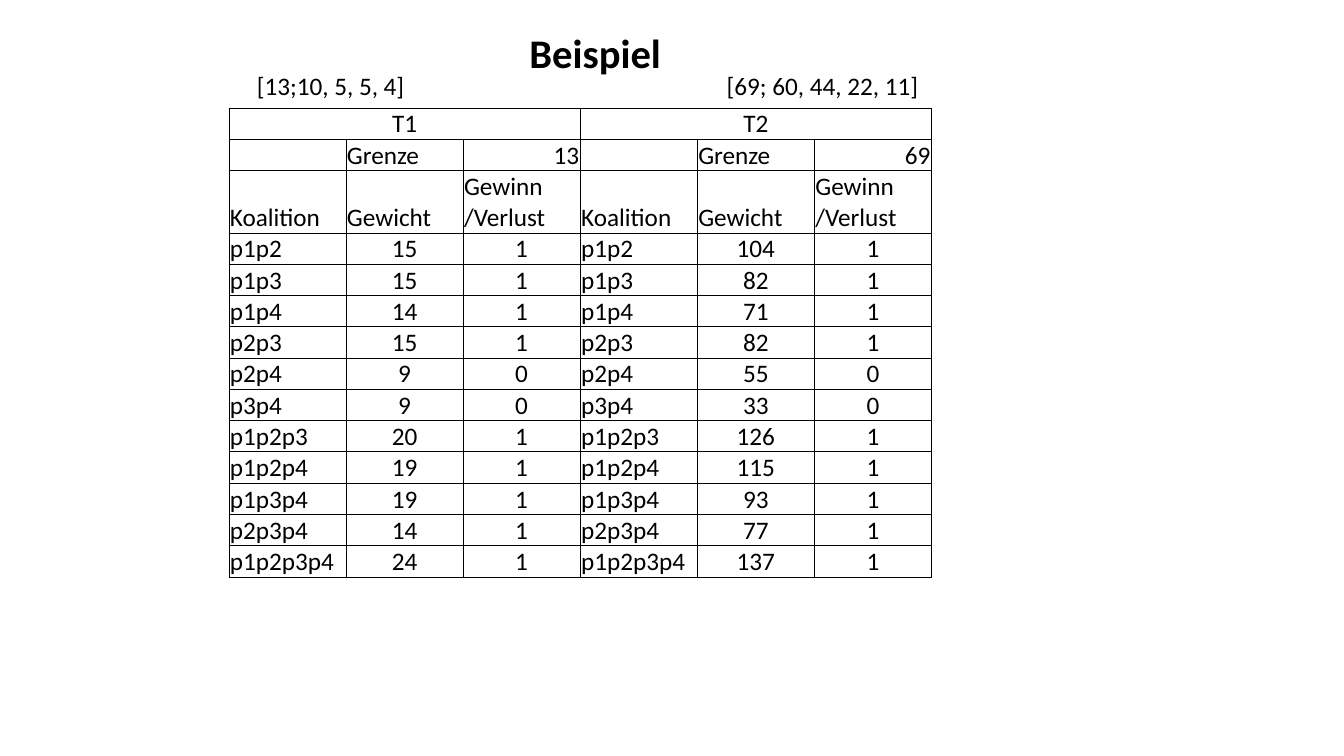
from lxml import etree
from pptx import Presentation
from pptx.dml.color import RGBColor
from pptx.enum.text import MSO_ANCHOR, PP_ALIGN
from pptx.oxml.ns import qn
from pptx.util import Inches, Pt

LEFT, CENTER, RIGHT = PP_ALIGN.LEFT, PP_ALIGN.CENTER, PP_ALIGN.RIGHT
TOP, MIDDLE, BOTTOM = MSO_ANCHOR.TOP, MSO_ANCHOR.MIDDLE, MSO_ANCHOR.BOTTOM

# Content
FONT, BLACK = "Calibri", "000000"
TITLE = "Beispiel"
GAMES = [("T1", "13"), ("T2", "69")]
HEADINGS = ["Koalition", "Gewicht", "Gewinn /Verlust"]
COALITIONS = [  # coalition, weight in T1, weight in T2, win in both games
    ("p1p2", 15, 104, 1),
    ("p1p3", 15, 82, 1),
    ("p1p4", 14, 71, 1),
    ("p2p3", 15, 82, 1),
    ("p2p4", 9, 55, 0),
    ("p3p4", 9, 33, 0),
    ("p1p2p3", 20, 126, 1),
    ("p1p2p4", 19, 115, 1),
    ("p1p3p4", 19, 93, 1),
    ("p2p3p4", 14, 77, 1),
    ("p1p2p3p4", 24, 137, 1),
]
# text, left, top, width, height, size, bold, alignment, anchor, wrap
CAPTIONS = [
    (TITLE, 1.75, 0.11, 8.31, 0.81, 29, True, CENTER, MIDDLE, True),
    ("[13;10, 5, 5, 4]", 2.45, 0.65, 1.74, 0.4, 18, False, LEFT, TOP, False),
    ("[69; 60, 44, 22, 11]", 7.11, 0.65, 2.13, 0.4, 18, False, LEFT, TOP, False),
]

# Table layout
TABLE_LEFT, TABLE_TOP, TABLE_WIDTH = 2.27, 1.07, 6.97
ROW_HEIGHT, HEADING_ROW = 0.31, 2
COLUMNS = len(GAMES) * len(HEADINGS)
ROWS = 3 + len(COALITIONS)


def color(hex_value):
    return RGBColor.from_string(hex_value)


def write(frame, text, size, alignment, bold=False):
    frame.text = text
    paragraph = frame.paragraphs[0]
    paragraph.alignment = alignment
    paragraph.font.size = Pt(size)
    for run in paragraph.runs:
        run.font.name = FONT
        run.font.size = Pt(size)
        run.font.bold = bold
        run.font.color.rgb = color(BLACK)


def add_borders(cell):
    properties = cell._tc.get_or_add_tcPr()
    for side in ("a:lnL", "a:lnR", "a:lnT", "a:lnB"):
        line = etree.SubElement(properties, qn(side), w=str(Pt(0.5)))
        fill = etree.SubElement(line, qn("a:solidFill"))
        etree.SubElement(fill, qn("a:srgbClr"), val=BLACK)


def game_rows(index):
    """Rows of one game's block, each cell as (text, alignment)."""
    name, limit = GAMES[index]
    rows = [
        [(name, CENTER), ("", LEFT), ("", LEFT)],
        [("", LEFT), ("Grenze", LEFT), (limit, RIGHT)],
        [(heading, LEFT) for heading in HEADINGS],
    ]
    for coalition, *weights, win in COALITIONS:
        rows.append([(coalition, LEFT), (str(weights[index]), CENTER), (str(win), CENTER)])
    return rows


prs = Presentation()
prs.slide_width, prs.slide_height = Inches(13.33), Inches(7.5)
slide = prs.slides.add_slide(prs.slide_layouts[6])

# Title and weight vectors
for text, left, top, width, height, size, bold, alignment, anchor, wrap in CAPTIONS:
    caption = slide.shapes.add_textbox(Inches(left), Inches(top), Inches(width), Inches(height))
    frame = caption.text_frame
    frame.word_wrap = wrap
    frame.vertical_anchor = anchor
    write(frame, text, size, alignment, bold)

# Coalition table
table = slide.shapes.add_table(
    ROWS, COLUMNS, Inches(TABLE_LEFT), Inches(TABLE_TOP),
    Inches(TABLE_WIDTH), Inches(ROW_HEIGHT * (ROWS + 1))).table
table.first_row = table.horz_banding = False
for column in table.columns:
    column.width = Inches(TABLE_WIDTH / COLUMNS)
for index, row in enumerate(table.rows):
    row.height = Inches(ROW_HEIGHT * (2 if index == HEADING_ROW else 1))

for game in range(len(GAMES)):
    first = game * len(HEADINGS)
    for r, row in enumerate(game_rows(game)):
        for c, (text, alignment) in enumerate(row):
            cell = table.cell(r, first + c)
            cell.margin_left = cell.margin_right = cell.margin_top = Inches(0.01)
            cell.margin_bottom = 0
            cell.vertical_anchor = BOTTOM
            write(cell.text_frame, text, 18, alignment)
            add_borders(cell)
            cell.fill.background()
    table.cell(0, first).merge(table.cell(0, first + len(HEADINGS) - 1))

prs.save("out.pptx")
